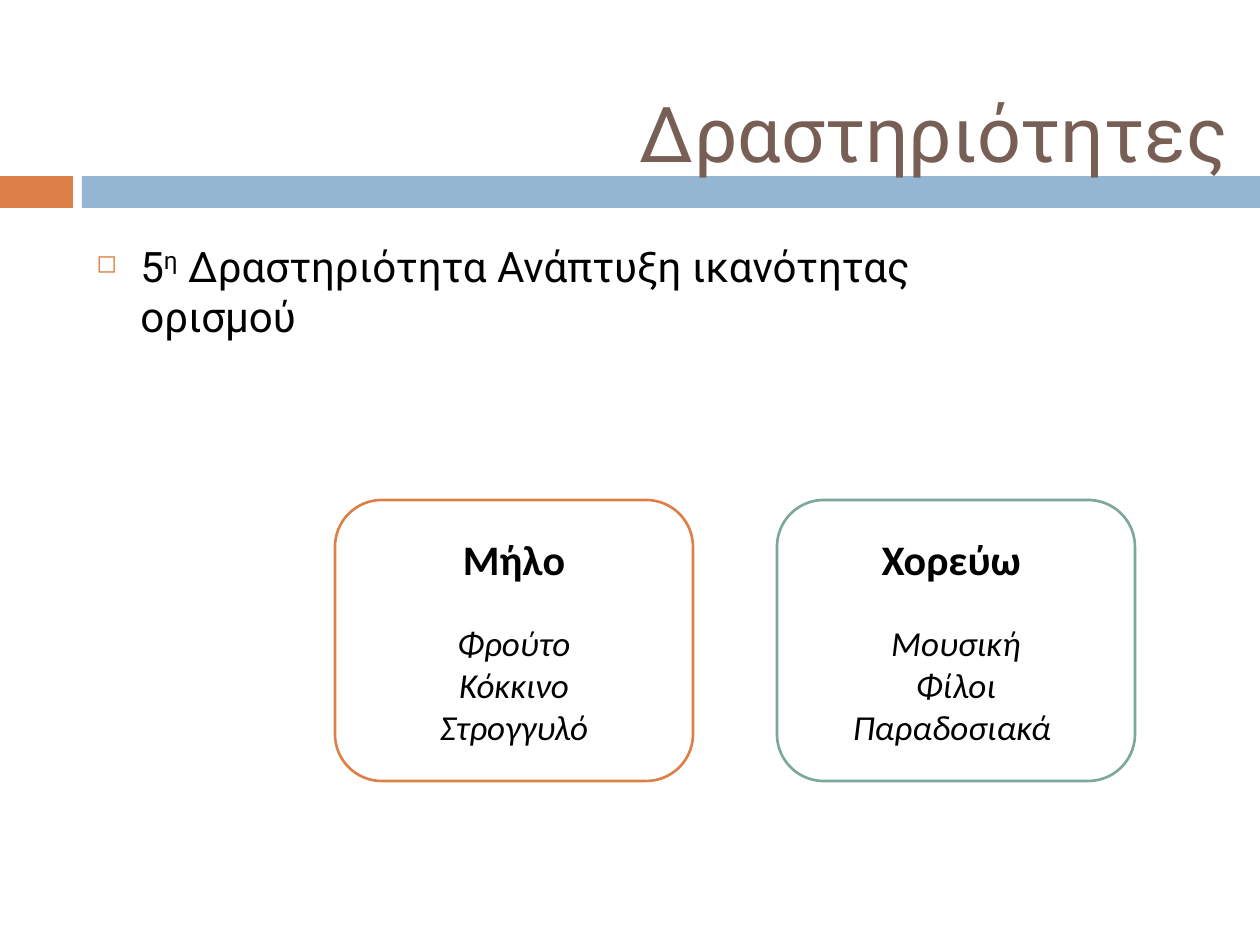
from lxml.etree import SubElement
from pptx import Presentation
from pptx.dml.color import RGBColor
from pptx.enum.shapes import MSO_SHAPE
from pptx.enum.text import MSO_ANCHOR, PP_ALIGN
from pptx.oxml.ns import qn
from pptx.util import Inches, Pt

PX_PER_INCH = 126
ORANGE = RGBColor(0xDD, 0x80, 0x47)
BLUE = RGBColor(0x94, 0xB6, 0xD2)
GREEN = RGBColor(0x7B, 0xA7, 0x9D)
BROWN = RGBColor(0x77, 0x5F, 0x55)
BLACK = RGBColor(0, 0, 0)
WHITE = RGBColor(0xFF, 0xFF, 0xFF)

CARDS = [
    (ORANGE, "Μήλο", ["Φρούτο", "Κόκκινο", "Στρογγυλό"]),
    (GREEN, "Χορεύω ", ["Μουσική", "Φίλοι", "Παραδοσιακά "]),
]


def px(length):
    return Inches(length / PX_PER_INCH)


def set_font(font, name, size, color):
    font.name = name
    font.size = Pt(size)
    font.color.rgb = color


def add_filled_shape(slide, kind, left, top, width, height, fill):
    shape = slide.shapes.add_shape(kind, px(left), px(top), px(width), px(height))
    shape.shadow.inherit = False
    shape.fill.solid()
    shape.fill.fore_color.rgb = fill
    shape.line.fill.background()
    return shape


def add_header_band(slide, top, width, height):
    accent_width, gap = 73, 9
    add_filled_shape(slide, MSO_SHAPE.RECTANGLE, 0, top, accent_width, height, ORANGE)
    left = accent_width + gap
    return add_filled_shape(slide, MSO_SHAPE.RECTANGLE, left, top, width - left, height, BLUE)


def place_title(slide, left, top, width, height, band):
    """Place the title in front of the header band."""
    title = slide.shapes.title
    title.left, title.top, title.width, title.height = map(px, (left, top, width, height))
    band.element.addnext(title.element)
    frame = title.text_frame
    frame.text = "Δραστηριότητες"
    frame.vertical_anchor = MSO_ANCHOR.MIDDLE
    paragraph = frame.paragraphs[0]
    paragraph.alignment = PP_ALIGN.RIGHT
    set_font(paragraph.font, "Roboto", 44, BROWN)


def add_bullet(paragraph, character, color, percent, indent):
    properties = paragraph._p.get_or_add_pPr()
    properties.set("marL", str(px(indent)))
    properties.set("indent", str(-px(indent)))
    bullet_color = SubElement(properties, qn("a:buClr"))
    SubElement(bullet_color, qn("a:srgbClr"), val=str(color))
    SubElement(properties, qn("a:buSzPct"), val=str(percent * 1000))
    SubElement(properties, qn("a:buChar"), char=character)


def add_activity_text(slide, left, top, width, height):
    box = slide.shapes.add_textbox(px(left), px(top), px(width), px(height))
    frame = box.text_frame
    frame.word_wrap = True
    paragraph = frame.paragraphs[0]
    add_bullet(paragraph, "◻", ORANGE, 60, 44)
    set_font(paragraph.font, "Roboto", 24, BLACK)
    for text, baseline in [
        ("5", 0),
        ("η", 30),
        (" Δραστηριότητα Ανάπτυξη ικανότητας ορισμού", 0),
    ]:
        run = paragraph.add_run()
        run.text = text
        if baseline:
            run.font._element.set("baseline", str(baseline * 1000))


def add_card(slide, left, top, width, height, color, heading, clues):
    card = add_filled_shape(
        slide, MSO_SHAPE.ROUNDED_RECTANGLE, left, top, width, height, WHITE
    )
    card.line.color.rgb = color
    card.line.width = Pt(1.5)
    frame = card.text_frame
    frame.word_wrap = True
    frame.vertical_anchor = MSO_ANCHOR.MIDDLE
    frame.text = "\n".join([heading, *clues])
    for index, paragraph in enumerate(frame.paragraphs):
        is_heading = index == 0
        paragraph.alignment = PP_ALIGN.CENTER
        set_font(paragraph.font, "Calibri", 24 if is_heading else 20, BLACK)
        paragraph.font.bold = is_heading
        paragraph.font.italic = not is_heading
    frame.paragraphs[1].space_before = Pt(22)


def add_cards(slide, left, top, card_width, height, gap):
    for index, (color, heading, clues) in enumerate(CARDS):
        card_left = left + index * (card_width + gap)
        add_card(slide, card_left, top, card_width, height, color, heading, clues)


def main():
    presentation = Presentation()
    presentation.slide_width = px(1260)
    presentation.slide_height = px(945)
    slide = presentation.slides.add_slide(presentation.slide_layouts[5])
    band = add_header_band(slide, 176, 1260, 32)
    place_title(slide, 294, 79, 947, 106, band)
    add_activity_text(slide, 84, 234, 988, 645)
    add_cards(slide, 335, 500, 358, 281, 84)
    presentation.save("out.pptx")


if __name__ == "__main__":
    main()
